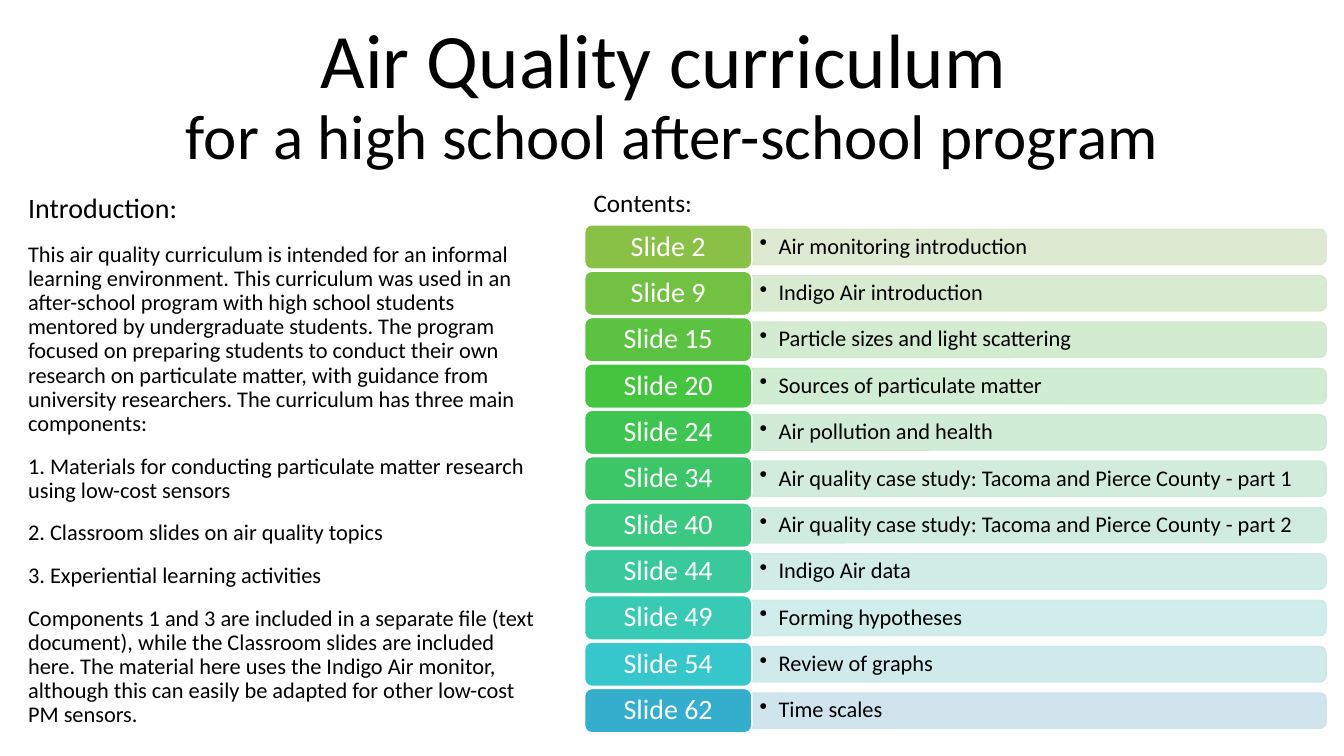
"""Build the overview slide of an air quality curriculum."""
from dataclasses import dataclass

from lxml.etree import SubElement
from pptx import Presentation
from pptx.dml.color import RGBColor
from pptx.enum.shapes import MSO_SHAPE as Preset
from pptx.enum.text import MSO_ANCHOR as Anchor, MSO_AUTO_SIZE as AutoSize, PP_ALIGN as Align
from pptx.oxml.ns import qn
from pptx.shapes.autoshape import Shape
from pptx.slide import Slide
from pptx.text.text import TextFrame, _Paragraph as Paragraph
from pptx.util import Pt

FONT = "Calibri"
BLACK, WHITE = "000000", "FFFFFF"
ROW_TOP, ROW_PITCH = 160.6, 33.12
LABEL_LEFT, LABEL_WIDTH, LABEL_HEIGHT = 417.6, 119.5, 31.6
TOPIC_LEFT, TOPIC_WIDTH, TOPIC_HEIGHT = 537.6, 409.6, 25.2
BULLET_INDENT = 13.6


@dataclass(frozen=True)
class Line:
    text: str
    size: float
    space_before: float = 0


@dataclass(frozen=True)
class Entry:
    label: str
    topic: str
    label_color: str
    topic_color: str


TITLE = [
    Line("Air Quality curriculum ", 55),
    Line("for a high school after-school program", 45),
]
INTRODUCTION = [
    Line("Introduction:", 20),
    Line("This air quality curriculum is intended for an informal learning environment. "
         "This curriculum was used in an after-school program with high school students "
         "mentored by undergraduate students. The program focused on preparing students "
         "to conduct their own research on particulate matter, with guidance from "
         "university researchers. The curriculum has three main components:", 16, 13.2),
    Line("1. Materials for conducting particulate matter research using low-cost sensors",
         16, 13.2),
    Line("2. Classroom slides on air quality topics", 16, 13.2),
    Line("3. Experiential learning activities", 16, 13.2),
    Line("Components 1 and 3 are included in a separate file (text document), while the "
         "Classroom slides are included here. The material here uses the Indigo Air "
         "monitor, although this can easily be adapted for other low-cost PM sensors.",
         16, 13.2),
]
CASE_STUDY = "Air quality case study: Tacoma and Pierce County - part"
ENTRIES = [
    Entry("Slide 2", "Air monitoring introduction", "88C145", "DAE7CD"),
    Entry("Slide 9", "Indigo Air introduction", "73C142", "D4E9CC"),
    Entry("Slide 15", "Particle sizes and light scattering", "5CC241", "CFE9CC"),
    Entry("Slide 20", "Sources of particulate matter", "44C43F", "CBEACF"),
    Entry("Slide 24", "Air pollution and health", "3EC551", "CBEAD3"),
    Entry("Slide 34", f"{CASE_STUDY} 1", "3DC668", "CCEAD8"),
    Entry("Slide 40", f"{CASE_STUDY} 2", "3BC880", "CBEBDE"),
    Entry("Slide 44", "Indigo Air data", "39C99A", "CBEBE3"),
    Entry("Slide 49", "Forming hypotheses", "38CAB4", "CBEBE9"),
    Entry("Slide 54", "Review of graphs", "36C7CC", "CAE7EC"),
    Entry("Slide 62", "Time scales", "35ADCD", "CBE2EC"),
]


def color(value: str) -> RGBColor:
    return RGBColor.from_string(value)


def write(frame: TextFrame, lines: list[Line], anchor: Anchor, align: Align = Align.LEFT,
          text_color: str = BLACK, spacing: float = 0.9) -> None:
    frame.word_wrap = True
    frame.auto_size = AutoSize.NONE
    frame.vertical_anchor = anchor
    for index, line in enumerate(lines):
        paragraph = frame.add_paragraph() if index else frame.paragraphs[0]
        paragraph.text = line.text
        paragraph.alignment = align
        paragraph.line_spacing = spacing
        paragraph.space_before = Pt(line.space_before)
        paragraph.font.name = FONT
        paragraph.font.size = Pt(line.size)
        paragraph.font.color.rgb = color(text_color)


def set_margins(frame: TextFrame, side: float, edge: float) -> None:
    frame.margin_left = frame.margin_right = Pt(side)
    frame.margin_top = frame.margin_bottom = Pt(edge)


def add_bullet(paragraph: Paragraph) -> None:
    properties = paragraph._p.get_or_add_pPr()
    properties.set("marL", str(Pt(BULLET_INDENT)))
    properties.set("indent", str(-Pt(BULLET_INDENT)))
    bullet = SubElement(properties, qn("a:buChar"))
    bullet.set("char", "•")
    properties.find(qn("a:defRPr")).addprevious(bullet)


def add_text_box(slide: Slide, left: float, top: float, width: float, height: float) -> TextFrame:
    return slide.shapes.add_textbox(Pt(left), Pt(top), Pt(width), Pt(height)).text_frame


def add_panel(slide: Slide, preset: Preset, left: float, top: float, width: float,
              height: float, fill: str, line: str) -> Shape:
    shape = slide.shapes.add_shape(preset, Pt(left), Pt(top), Pt(width), Pt(height))
    shape.shadow.inherit = False
    shape.fill.solid()
    shape.fill.fore_color.rgb = color(fill)
    shape.line.color.rgb = color(line)
    shape.line.width = Pt(1)
    return shape


def add_entry(slide: Slide, entry: Entry, top: float) -> None:
    middle = top + LABEL_HEIGHT / 2
    center = TOPIC_LEFT + TOPIC_WIDTH / 2
    topic = add_panel(slide, Preset.ROUND_2_SAME_RECTANGLE, center - TOPIC_HEIGHT / 2,
                      middle - TOPIC_WIDTH / 2, TOPIC_HEIGHT, TOPIC_WIDTH,
                      entry.topic_color, entry.topic_color)
    topic.rotation = 90
    for tint in topic._element.spPr.iter(qn("a:srgbClr")):
        SubElement(tint, qn("a:alpha")).set("val", "90000")

    topic_frame = add_text_box(slide, TOPIC_LEFT, middle - TOPIC_HEIGHT / 2,
                               TOPIC_WIDTH, TOPIC_HEIGHT)
    write(topic_frame, [Line(entry.topic, 16)], Anchor.MIDDLE)
    set_margins(topic_frame, 5, 2)
    add_bullet(topic_frame.paragraphs[0])

    label = add_panel(slide, Preset.ROUNDED_RECTANGLE, LABEL_LEFT, top, LABEL_WIDTH,
                      LABEL_HEIGHT, entry.label_color, WHITE)
    write(label.text_frame, [Line(entry.label, 20)], Anchor.MIDDLE, Align.CENTER, WHITE)
    set_margins(label.text_frame, 6, 3)


def main() -> None:
    presentation = Presentation()
    presentation.slide_width, presentation.slide_height = Pt(960), Pt(540)
    slide = presentation.slides.add_slide(presentation.slide_layouts[5])

    title = slide.shapes.title
    title.left, title.top, title.width, title.height = Pt(0), Pt(7.2), Pt(960), Pt(120.2)
    write(title.text_frame, TITLE, Anchor.BOTTOM, Align.CENTER)

    write(add_text_box(slide, 13, 130.3, 381.6, 393.1), INTRODUCTION, Anchor.BOTTOM)
    write(add_text_box(slide, 416.9, 130.3, 279.4, 28.8), [Line("Contents:", 18)],
          Anchor.TOP, spacing=1.0)
    for row, entry in enumerate(ENTRIES):
        add_entry(slide, entry, ROW_TOP + row * ROW_PITCH)

    presentation.save("out.pptx")


if __name__ == "__main__":
    main()
